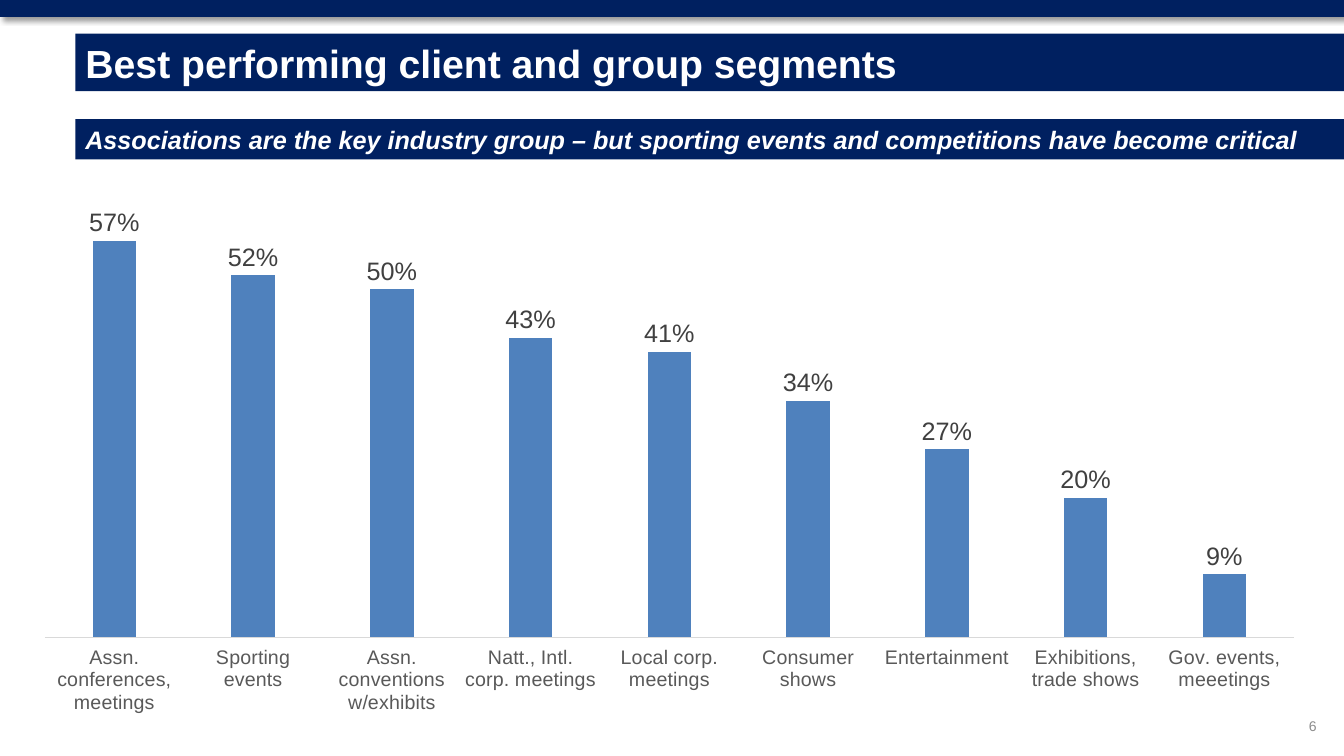
from dataclasses import dataclass

from lxml import etree
from pptx import Presentation
from pptx.chart.data import CategoryChartData
from pptx.dml.color import RGBColor
from pptx.enum.chart import XL_CHART_TYPE, XL_LABEL_POSITION, XL_TICK_LABEL_POSITION, XL_TICK_MARK
from pptx.enum.shapes import MSO_SHAPE
from pptx.enum.text import MSO_ANCHOR, MSO_AUTO_SIZE, PP_ALIGN
from pptx.oxml import parse_xml
from pptx.oxml.ns import nsdecls, qn
from pptx.util import Cm, Pt

COLUMNS = XL_CHART_TYPE.COLUMN_CLUSTERED
OUTSIDE = XL_LABEL_POSITION.OUTSIDE_END
LABELS_LOW = XL_TICK_LABEL_POSITION.LOW
NO_TICK = XL_TICK_MARK.NONE
RECTANGLE = MSO_SHAPE.RECTANGLE
MIDDLE = MSO_ANCHOR.MIDDLE
NO_FIT = MSO_AUTO_SIZE.NONE
LEFT, RIGHT = PP_ALIGN.LEFT, PP_ALIGN.RIGHT

SLIDE_WIDTH, SLIDE_HEIGHT = 33.87, 19.05
BAND_LEFT = 1.9
BAND_WIDTH = SLIDE_WIDTH - BAND_LEFT

SEGMENT_SHARES = {
    "Assn. conferences, meetings": 0.57,
    "Sporting events": 0.52,
    "Assn. conventions w/exhibits": 0.50,
    "Natt., Intl. corp. meetings": 0.43,
    "Local corp. meetings": 0.41,
    "Consumer shows": 0.34,
    "Entertainment": 0.27,
    "Exhibitions, trade shows": 0.20,
    "Gov. events, meeetings": 0.09,
}


@dataclass(frozen=True)
class Theme:
    font: str = "Arial"
    navy: str = "002060"
    white: str = "FFFFFF"
    column: str = "4F81BD"
    value: str = "404040"
    category: str = "595959"
    axis: str = "D9D9D9"
    number: str = "8C8C8C"
    title_size: int = 28
    body_size: int = 18
    category_size: int = 14
    number_size: int = 10


class SlideBuilder:
    def __init__(self, presentation, theme):
        self.theme = theme
        self.slide = presentation.slides.add_slide(presentation.slide_layouts[5])

    def style(self, font, size, color, bold=False, italic=False):
        font.name = self.theme.font
        font.size = Pt(size)
        font.color.rgb = RGBColor.from_string(color)
        font.bold = bold
        font.italic = italic

    def fill(self, target, color):
        target.fill.solid()
        target.fill.fore_color.rgb = RGBColor.from_string(color)

    def add_text(self, shape, text, size, color, align=LEFT, bold=False, italic=False):
        frame = shape.text_frame
        frame.word_wrap = True
        frame.auto_size = NO_FIT
        frame.vertical_anchor = MIDDLE
        paragraph = frame.paragraphs[0]
        paragraph.alignment = align
        run = paragraph.add_run()
        run.text = text
        self.style(run.font, size, color, bold, italic)

    def rectangle(self, left, top, width, height):
        shape = self.slide.shapes.add_shape(RECTANGLE, Cm(left), Cm(top), Cm(width), Cm(height))
        shape.shadow.inherit = False
        self.fill(shape, self.theme.navy)
        shape.line.fill.background()
        return shape

    def top_strip(self, height):
        strip = self.rectangle(0, 0, SLIDE_WIDTH, height)
        effects = strip.element.spPr.find(qn("a:effectLst"))
        shadow = etree.SubElement(
            effects, qn("a:outerShdw"), blurRad=str(Pt(4)), dist=str(Pt(3)),
            dir="2700000", algn="tl", rotWithShape="0")
        black = etree.SubElement(shadow, qn("a:srgbClr"), val="000000")
        etree.SubElement(black, qn("a:alpha"), val="40000")

    def title(self, text, top, height):
        title = self.slide.shapes.title
        title.left, title.top = Cm(BAND_LEFT), Cm(top)
        title.width, title.height = Cm(BAND_WIDTH), Cm(height)
        self.fill(title, self.theme.navy)
        self.add_text(title, text, self.theme.title_size, self.theme.white, bold=True)

    def subtitle(self, text, top, height):
        band = self.rectangle(BAND_LEFT, top, BAND_WIDTH, height)
        self.add_text(band, text, self.theme.body_size, self.theme.white, bold=True, italic=True)

    def page_number(self, text, left, top, width, height):
        box = self.slide.shapes.add_textbox(Cm(left), Cm(top), Cm(width), Cm(height))
        self.add_text(box, text, self.theme.number_size, self.theme.number, RIGHT)

    def column_chart(self, shares, left, top, width, height):
        data = CategoryChartData(number_format="0%")
        data.categories = list(shares)
        data.add_series("Series 1", list(shares.values()))
        chart = self.slide.shapes.add_chart(
            COLUMNS, Cm(left), Cm(top), Cm(width), Cm(height), data).chart
        chart.has_legend = False
        chart.has_title = False
        self.style(chart.font, self.theme.number_size, self.theme.value)

        segments = chart.category_axis
        segments.major_tick_mark = segments.minor_tick_mark = NO_TICK
        segments.tick_label_position = LABELS_LOW
        segments.has_major_gridlines = False
        segments.format.line.color.rgb = RGBColor.from_string(self.theme.axis)
        segments.format.line.width = Pt(0.75)
        self.style(segments.tick_labels.font, self.theme.category_size, self.theme.category)

        percent = chart.value_axis
        percent.minimum_scale, percent.maximum_scale = 0, 0.6
        percent.has_major_gridlines = False
        percent.visible = False

        plot = chart.plots[0]
        plot.gap_width, plot.overlap = 219, -27
        plot.vary_by_categories = False
        self.fill(plot.series[0].format, self.theme.column)
        plot.has_data_labels = True
        labels = plot.data_labels
        labels.show_value = True
        labels.position = OUTSIDE
        labels.number_format, labels.number_format_is_linked = "0%", False
        self.style(labels.font, self.theme.body_size, self.theme.value)
        self.place_plot(chart, x=0.006, y=0.035, w=0.975, h=0.801)

    def place_plot(self, chart, **fractions):
        area = chart.element.find(".//" + qn("c:plotArea"))
        for layout in area.findall(qn("c:layout")):
            area.remove(layout)
        modes = '<c:xMode val="edge"/><c:yMode val="edge"/>'
        sizes = "".join(f'<c:{key} val="{value}"/>' for key, value in fractions.items())
        area.insert(0, parse_xml(
            f'<c:layout {nsdecls("c")}><c:manualLayout><c:layoutTarget val="inner"/>'
            f"{modes}{sizes}</c:manualLayout></c:layout>"))


def main():
    presentation = Presentation()
    presentation.slide_width = Cm(SLIDE_WIDTH)
    presentation.slide_height = Cm(SLIDE_HEIGHT)
    builder = SlideBuilder(presentation, Theme())
    builder.top_strip(0.43)
    builder.title("Best performing client and group segments", 0.85, 1.45)
    builder.subtitle(
        "Associations are the key industry group – but sporting events "
        "and competitions have become critical", 3, 1.02)
    builder.column_chart(SEGMENT_SHARES, 0.94, 5.08, 32.28, 13.13)
    builder.page_number("6", 27.5, 17.78, 5.93, 1.02)
    presentation.save("out.pptx")


if __name__ == "__main__":
    main()
